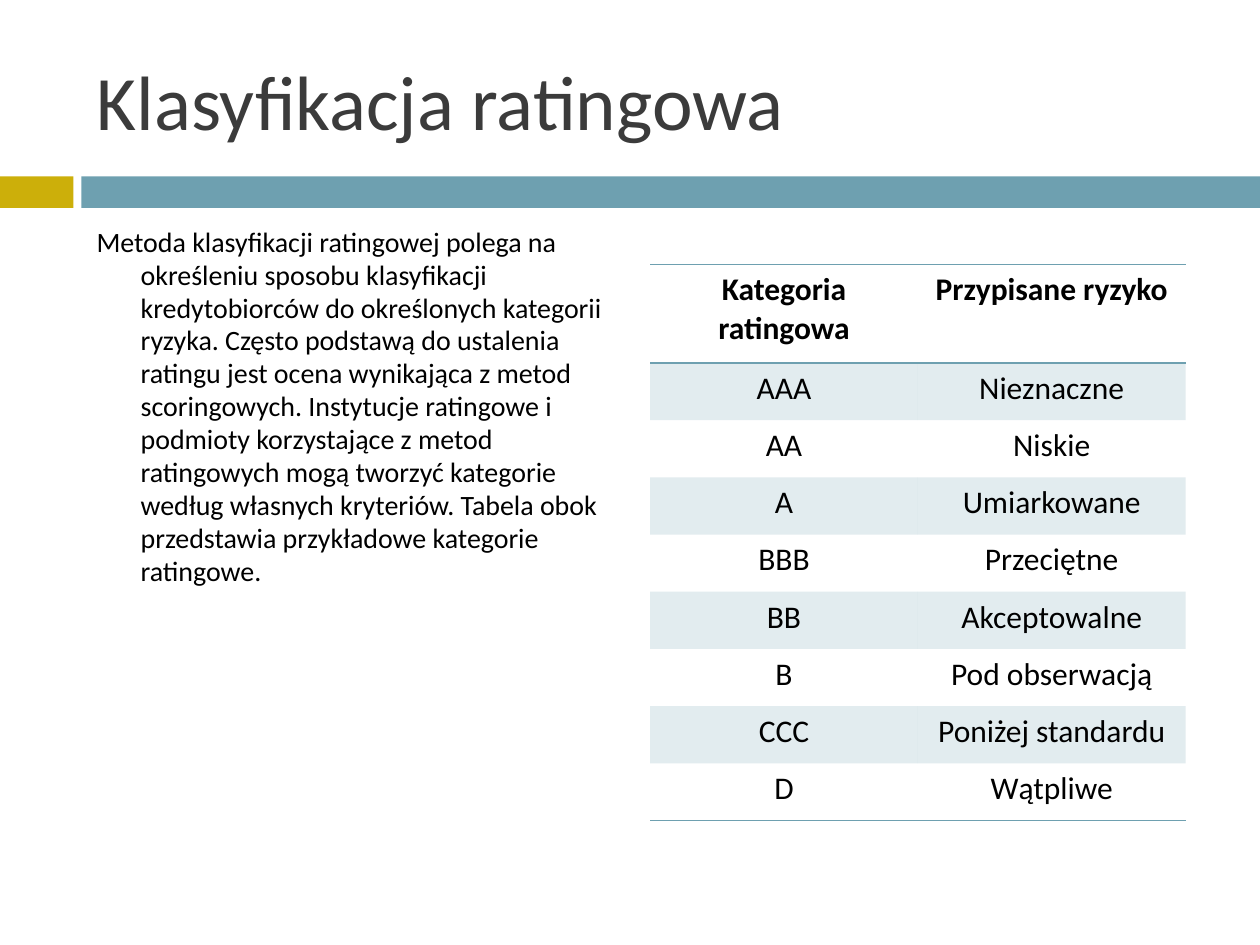
from dataclasses import dataclass

from lxml.etree import SubElement
from pptx import Presentation
from pptx.dml.color import RGBColor
from pptx.enum.shapes import MSO_SHAPE
from pptx.enum.text import MSO_ANCHOR, MSO_AUTO_SIZE, PP_ALIGN
from pptx.oxml.ns import qn
from pptx.util import Pt

COLORS = {"gold": "CCAF0A", "teal": "6EA0B0", "title": "3B3B3B", "text": "000000"}
FONT = "Calibri"
NO_TABLE_STYLE = "{2D5ABB26-0587-4C30-8999-92F81FD0307C}"
BAND_OPACITY = 20

DESCRIPTION = (
    "Metoda klasyfikacji ratingowej polega na określeniu sposobu klasyfikacji "
    "kredytobiorców do określonych kategorii ryzyka. Często podstawą do ustalenia "
    "ratingu jest ocena wynikająca z metod scoringowych. Instytucje ratingowe i "
    "podmioty korzystające z metod ratingowych mogą tworzyć kategorie według "
    "własnych kryteriów. Tabela obok przedstawia przykładowe kategorie ratingowe."
)


@dataclass(frozen=True)
class Box:
    left: float
    top: float
    width: float
    height: float

    def lengths(self) -> tuple:
        return Pt(self.left), Pt(self.top), Pt(self.width), Pt(self.height)


@dataclass(frozen=True)
class Bar:
    box: Box
    color: str


@dataclass(frozen=True)
class Rating:
    category: str
    risk: str


BARS = [
    Bar(Box(0, 100.8, 42, 18), "gold"),
    Bar(Box(46.5, 100.8, 673.5, 18), "teal"),
]
TITLE_BOX = Box(48, 18, 642, 78)
BODY_BOX = Box(48, 125.5, 306, 360)
TABLE_BOX = Box(371.5, 151, 306, 318)
HEADER_HEIGHT = 56.4

HEADER = Rating("Kategoria ratingowa", "Przypisane ryzyko")
RATINGS = [
    Rating("AAA", "Nieznaczne"),
    Rating("AA", "Niskie"),
    Rating("A", "Umiarkowane"),
    Rating("BBB", "Przeciętne"),
    Rating("BB", "Akceptowalne"),
    Rating("B", "Pod obserwacją"),
    Rating("CCC", "Poniżej standardu"),
    Rating("D", "Wątpliwe"),
]


def write_text(text_frame, text: str, *, size: float, color: str = "text",
               bold: bool = False, align=PP_ALIGN.LEFT):
    text_frame.word_wrap = True
    paragraph = text_frame.paragraphs[0]
    paragraph.alignment = align
    run = paragraph.add_run()
    run.text = text
    run.font.name = FONT
    run.font.size = Pt(size)
    run.font.bold = bold
    run.font.color.rgb = RGBColor.from_string(COLORS[color])
    return paragraph


def place(shape, box: Box, anchor) -> None:
    shape.left, shape.top, shape.width, shape.height = box.lengths()
    shape.text_frame.auto_size = MSO_AUTO_SIZE.NONE
    shape.text_frame.vertical_anchor = anchor


def add_bar(slide, bar: Bar) -> None:
    shape = slide.shapes.add_shape(MSO_SHAPE.RECTANGLE, *bar.box.lengths())
    shape.shadow.inherit = False
    shape.fill.solid()
    shape.fill.fore_color.rgb = RGBColor.from_string(COLORS[bar.color])
    shape.line.fill.background()


def add_hanging_text(shape, text: str) -> None:
    paragraph = write_text(shape.text_frame, text, size=16)
    paragraph.space_before = Pt(7)
    paragraph.line_spacing = 0.98
    properties = paragraph._p.get_or_add_pPr()
    properties.set("marL", str(Pt(25.2)))
    properties.set("indent", str(-Pt(25.2)))
    SubElement(properties, qn("a:buNone"))


def fill_cell(cell, banded: bool) -> None:
    if not banded:
        cell.fill.background()
        return
    cell.fill.solid()
    cell.fill.fore_color.rgb = RGBColor.from_string(COLORS["teal"])
    color = cell._tc.tcPr.find(".//" + qn("a:srgbClr"))
    SubElement(color, qn("a:alpha"), val=str(BAND_OPACITY * 1000))


def add_borders(cell, *sides: str) -> None:
    """Draw borders on the sides named "T" and "B", ahead of the cell's fill."""
    properties = cell._tc.get_or_add_tcPr()
    for position, side in enumerate(sides):
        line = SubElement(properties, qn(f"a:ln{side}"), w=str(Pt(1)))
        solid = SubElement(line, qn("a:solidFill"))
        SubElement(solid, qn("a:srgbClr"), val=COLORS["teal"])
        properties.insert(position, line)


def add_rating_table(slide) -> None:
    rows = [HEADER, *RATINGS]
    frame = slide.shapes.add_table(len(rows), 2, *TABLE_BOX.lengths())
    for style in frame.element.iter(qn("a:tableStyleId")):
        style.text = NO_TABLE_STYLE
    table = frame.table
    table.horz_banding = False
    for column in table.columns:
        column.width = Pt(TABLE_BOX.width / 2)

    row_height = (TABLE_BOX.height - HEADER_HEIGHT) / len(RATINGS)
    for index, rating in enumerate(rows):
        is_header = index == 0
        table.rows[index].height = Pt(HEADER_HEIGHT if is_header else row_height)
        for cell, text in zip(table.rows[index].cells, (rating.category, rating.risk)):
            write_text(cell.text_frame, text, size=18, bold=is_header,
                       align=PP_ALIGN.CENTER)
            fill_cell(cell, banded=index % 2 == 1)
            if is_header:
                add_borders(cell, "T", "B")
            elif index == len(RATINGS):
                add_borders(cell, "B")


def main() -> None:
    presentation = Presentation()
    presentation.slide_width, presentation.slide_height = Pt(720), Pt(540)
    slide = presentation.slides.add_slide(presentation.slide_layouts[1])

    for bar in BARS:
        add_bar(slide, bar)

    title, body = slide.shapes.title, slide.placeholders[1]
    place(title, TITLE_BOX, MSO_ANCHOR.MIDDLE)
    write_text(title.text_frame, "Klasyfikacja ratingowa", size=44, color="title")
    place(body, BODY_BOX, MSO_ANCHOR.TOP)
    add_hanging_text(body, DESCRIPTION)

    add_rating_table(slide)
    presentation.save("out.pptx")


if __name__ == "__main__":
    main()
